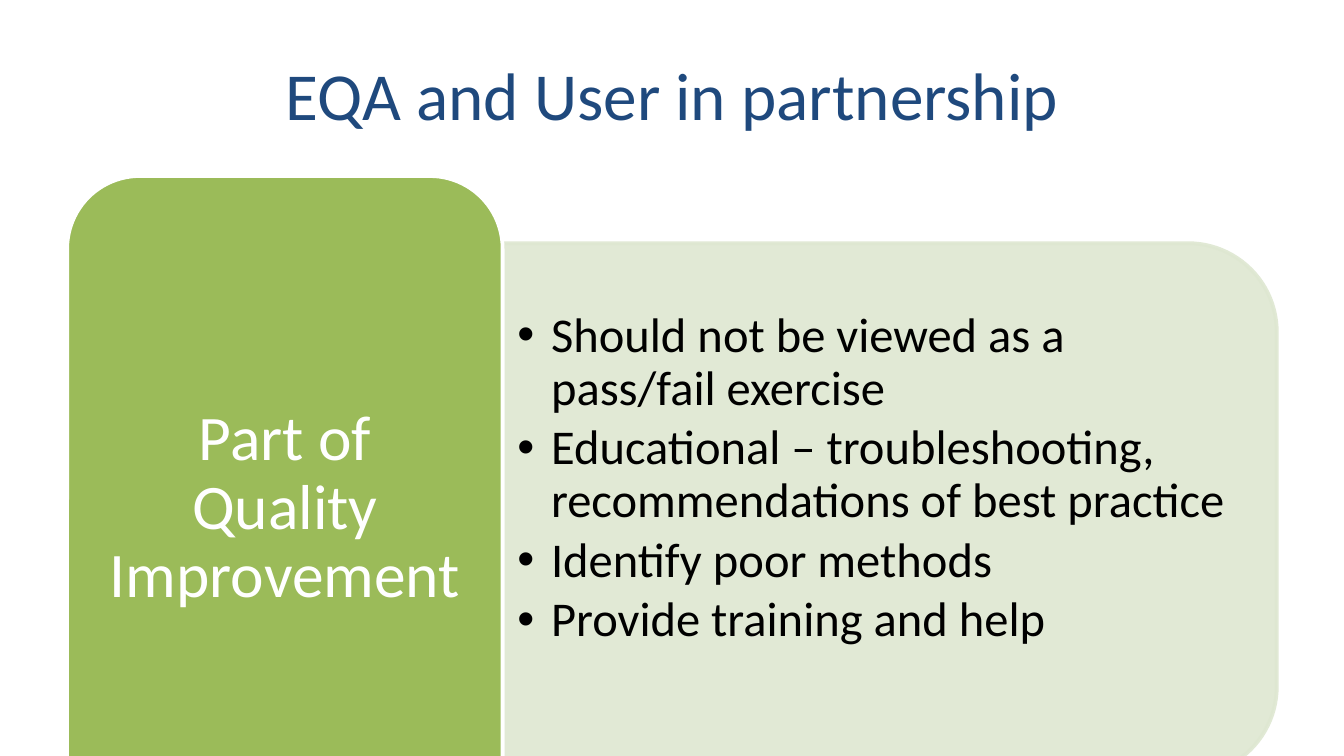
"""Build the slide on EQA and its users working in partnership."""
from lxml import etree
from pptx import Presentation
from pptx import util as u
from pptx.dml.color import RGBColor
from pptx.enum import shapes, text
from pptx.oxml import ns

NAVY = RGBColor(0x1F, 0x49, 0x7D)
GREEN = RGBColor(0x9B, 0xBB, 0x59)
PALE_GREEN = RGBColor(0xDE, 0xE7, 0xD1)
WHITE = RGBColor(0xFF, 0xFF, 0xFF)
BLACK = RGBColor(0, 0, 0)

POINTS = [
    "Should not be viewed as a pass/fail exercise",
    "Educational – troubleshooting, recommendations of best practice",
    "Identify poor methods",
    "Provide training and help",
]


def write(box, lines, size, color, align=text.PP_ALIGN.CENTER, spacing=1.0, after=0,
          insets=(0.1, 0.05, 0.1, 0.05), bullet=False):
    frame = box.text_frame
    frame.word_wrap = True
    frame.auto_size = text.MSO_AUTO_SIZE.NONE
    frame.vertical_anchor = text.MSO_ANCHOR.MIDDLE
    frame.margin_left, frame.margin_top, frame.margin_right, frame.margin_bottom = map(u.Inches, insets)
    for index, line in enumerate(lines):
        para = frame.paragraphs[0] if index == 0 else frame.add_paragraph()
        para.alignment = align
        para.line_spacing = spacing
        para.space_before = u.Pt(0)
        para.space_after = u.Pt(after)
        span = para.add_run()
        span.text = line
        span.font.name = "Calibri"
        span.font.size = u.Pt(size)
        span.font.color.rgb = color
        if bullet:
            properties = para._p.get_or_add_pPr()
            properties.set("marL", str(u.Inches(0.25)))
            properties.set("indent", str(-u.Inches(0.25)))
            etree.SubElement(properties, ns.qn("a:buChar")).set("char", "•")


def place(box, left, top, width, height):
    box.left, box.top, box.width, box.height = map(u.Inches, (left, top, width, height))


deck = Presentation()
deck.slide_width = u.Inches(10)
deck.slide_height = u.Inches(10 * 9 / 16)
page = deck.slides.add_slide(deck.slide_layouts[1])

title = page.shapes.title
place(title, 0.5, 0.23, 9, 0.94)
write(title, ["EQA and User in partnership"], 36, NAVY)

panel = page.shapes.add_shape(
    shapes.MSO_SHAPE.ROUND_2_SAME_RECTANGLE,
    u.Inches(4.64), u.Inches(0.91), u.Inches(3.96), u.Inches(5.76))
panel.rotation = 90
panel.shadow.inherit = False
panel.fill.solid()
panel.fill.fore_color.rgb = PALE_GREEN
panel.line.color.rgb = PALE_GREEN
panel.line.width = u.Pt(2)
for color in panel.element.spPr.iter(ns.qn("a:srgbClr")):
    etree.SubElement(color, ns.qn("a:alpha")).set("val", "90000")

body = page.placeholders[1]
place(body, 3.74, 2, 5.57, 3.57)
write(body, POINTS, 26, BLACK, align=text.PP_ALIGN.LEFT, spacing=0.9, after=4,
      insets=(0.11, 0.05, 0.11, 0.49), bullet=True)
panel.element.addnext(body.element)

card = page.shapes.add_shape(
    shapes.MSO_SHAPE.ROUNDED_RECTANGLE,
    u.Inches(0.5), u.Inches(1.31), u.Inches(3.24), u.Inches(4.95))
card.shadow.inherit = False
card.fill.solid()
card.fill.fore_color.rgb = GREEN
card.line.color.rgb = WHITE
card.line.width = u.Pt(2)
write(card, ["Part of Quality Improvement"], 34, WHITE, spacing=0.9,
      insets=(0.14, 0.07, 0.14, 0.07))

deck.save("out.pptx")
